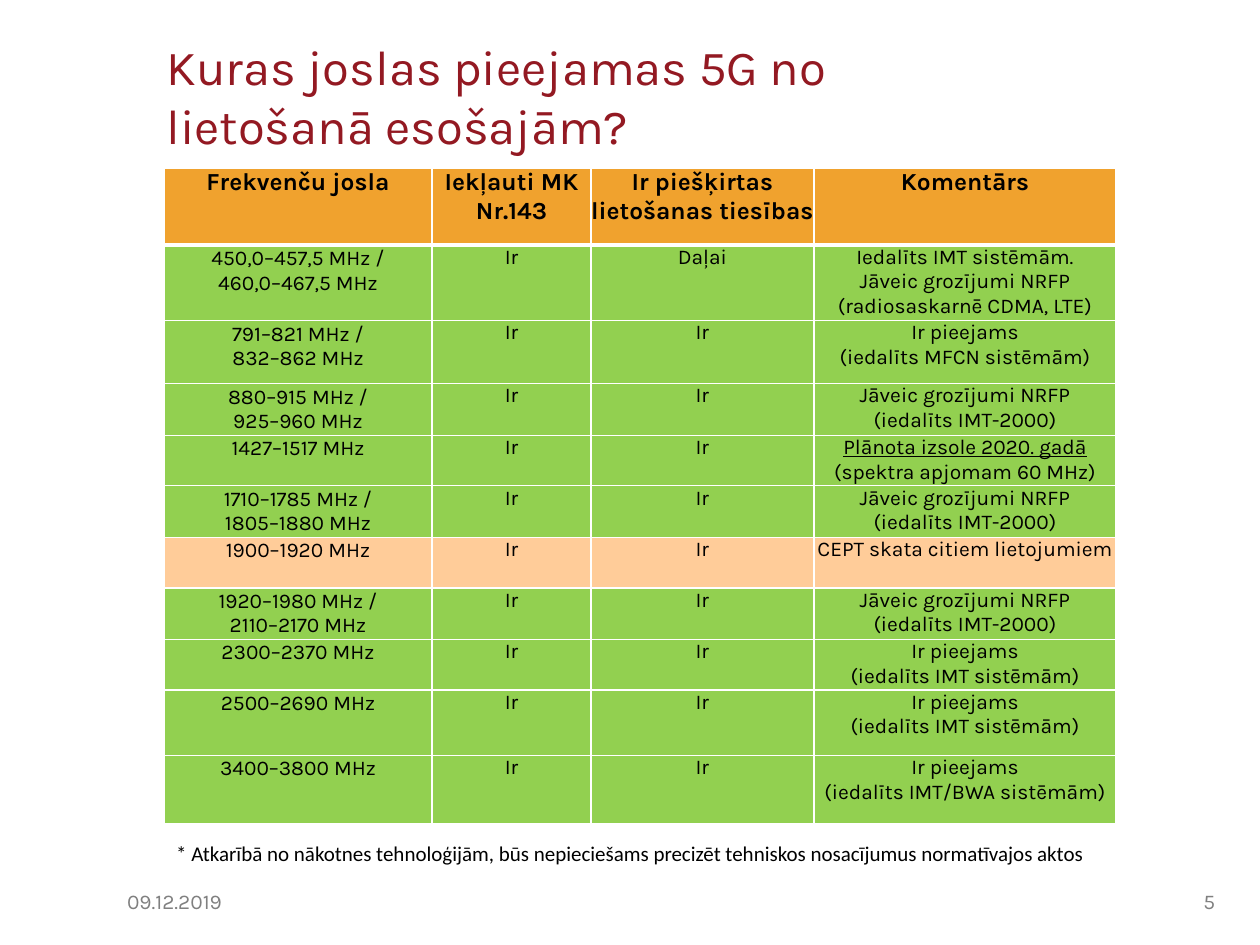
from dataclasses import dataclass

from lxml.etree import SubElement
from pptx import Presentation
from pptx.dml.color import RGBColor
from pptx.enum.text import MSO_ANCHOR as Anchor, PP_ALIGN as Align
from pptx.oxml.ns import qn
from pptx.util import Pt


@dataclass(frozen=True)
class Theme:
    font: str = "Karla"
    note_font: str = "Calibri"
    title: str = "931922"
    text: str = "000000"
    muted: str = "808080"
    border: str = "FFFFFF"
    header: str = "F0A22E"
    available: str = "92D050"
    other_use: str = "FFCC99"
    title_size: int = 28
    header_size: int = 14
    body_size: int = 12


THEME = Theme()

COLUMN_WIDTHS = (153.4, 90.7, 127.4, 172.8)
ROW_HEIGHTS = (44, 39, 36) + (28.8,) * 6 + (37.5, 39)

HEADER = ("Frekvenču josla", "Iekļauti MK Nr.143",
          "Ir piešķirtas\nlietošanas tiesības", "Komentārs")
AMENDING = "Jāveic grozījumi NRFP\n(iedalīts IMT-2000)"
IMT = "Ir pieejams\n(iedalīts IMT sistēmām)"
AUCTION = "Plānota izsole 2020. gadā"
OTHER_USE = "CEPT skata citiem lietojumiem"

# Band, usage rights granted, comment
BANDS = (
    ("450,0–457,5 MHz /\n460,0–467,5 MHz", "Daļai",
     "Iedalīts IMT sistēmām.\nJāveic grozījumi NRFP (radiosaskarnē CDMA, LTE)"),
    ("791–821 MHz /\n832–862 MHz", "Ir", "Ir pieejams\n(iedalīts MFCN sistēmām)"),
    ("880–915 MHz /\n925–960 MHz", "Ir", AMENDING),
    ("1427–1517 MHz", "Ir", AUCTION + " (spektra apjomam 60 MHz)"),
    ("1710–1785 MHz /\n1805–1880 MHz", "Ir", AMENDING),
    ("1900–1920 MHz", "Ir", OTHER_USE),
    ("1920–1980 MHz /\n2110–2170 MHz", "Ir", AMENDING),
    ("2300–2370 MHz", "Ir", IMT),
    ("2500–2690 MHz", "Ir", IMT),
    ("3400–3800 MHz", "Ir", "Ir pieejams\n(iedalīts IMT/BWA sistēmām)"),
)


def set_format(target, values):
    for name, value in values.items():
        setattr(target, name, value)


def add_run(paragraph, text, color, size, **font_values):
    run = paragraph.add_run()
    run.text = text
    set_format(run.font, {"name": THEME.font, "size": Pt(size), **font_values})
    run.font.color.rgb = RGBColor.from_string(color)


def add_text(slide, box, text, color, size, align=Align.LEFT,
             anchor=Anchor.MIDDLE, wrap=True, **font_values):
    shape = slide.shapes.add_textbox(*map(Pt, box))
    set_format(shape.text_frame, {"word_wrap": wrap, "vertical_anchor": anchor})
    paragraph = shape.text_frame.paragraphs[0]
    paragraph.alignment = align
    add_run(paragraph, text, color, size, **font_values)


def add_borders(cell, top, bottom):
    properties = cell._tc.get_or_add_tcPr()
    for side, width in {"L": 1, "R": 1, "T": top, "B": bottom}.items():
        line = SubElement(properties, qn(f"a:ln{side}"), w=str(Pt(width)))
        fill = SubElement(line, qn("a:solidFill"))
        SubElement(fill, qn("a:srgbClr"), val=THEME.border)


def fill_cell(cell, text, fill, size, bold, margin):
    set_format(cell, {"margin_left": margin, "margin_right": margin,
                      "margin_top": margin, "margin_bottom": 0})
    cell.fill.solid()
    cell.fill.fore_color.rgb = RGBColor.from_string(fill)
    for index, line in enumerate(text.split("\n")):
        frame = cell.text_frame
        paragraph = frame.add_paragraph() if index else frame.paragraphs[0]
        paragraph.alignment = Align.CENTER
        # The planned auction is underlined
        if line.startswith(AUCTION):
            add_run(paragraph, AUCTION, THEME.text, size, bold=bold, underline=True)
            line = line.removeprefix(AUCTION)
        add_run(paragraph, line, THEME.text, size, bold=bold)


def add_band_table(slide, box):
    rows = [HEADER] + [(band, "Ir", granted, comment)
                       for band, granted, comment in BANDS]
    table = slide.shapes.add_table(len(rows), len(HEADER), *map(Pt, box)).table
    for column, width in zip(table.columns, COLUMN_WIDTHS):
        column.width = Pt(width)
    for row, height in zip(table.rows, ROW_HEIGHTS):
        row.height = Pt(height)

    for row_index, texts in enumerate(rows):
        is_header = row_index == 0
        if is_header:
            fill, size = THEME.header, THEME.header_size
        else:
            fill = THEME.other_use if texts[-1] == OTHER_USE else THEME.available
            size = THEME.body_size
        for column_index, text in enumerate(texts):
            cell = table.cell(row_index, column_index)
            add_borders(cell, top=3 if row_index == 1 else 1,
                        bottom=3 if is_header else 1)
            margin = Pt(0.7) if column_index == 0 and not is_header else 0
            fill_cell(cell, text, fill, size, is_header, margin)


def add_footer(slide, box):
    left, top, width, height = box
    field_width = 168
    add_text(slide, (left, top, field_width, height), "09.12.2019",
             THEME.muted, THEME.body_size)
    add_text(slide, (left + width - field_width, top, field_width, height), "5",
             THEME.muted, THEME.body_size, align=Align.RIGHT)


def main():
    presentation = Presentation()
    set_format(presentation, {"slide_width": Pt(720), "slide_height": Pt(540)})
    slide = presentation.slides.add_slide(presentation.slide_layouts[6])

    # Title
    add_text(slide, (88, 9.5, 456.5, 90),
             "Kuras joslas pieejamas 5G no lietošanā esošajām?",
             THEME.title, THEME.title_size)
    # Footer
    add_footer(slide, (65.5, 500.5, 636, 28.8))
    # Frequency bands
    add_band_table(slide, (93.6, 96, sum(COLUMN_WIDTHS), sum(ROW_HEIGHTS)))
    # Footnote
    add_text(slide, (93.6, 476.6, 537, 21.8),
             "* Atkarībā no nākotnes tehnoloģijām, būs nepieciešams precizēt "
             "tehniskos nosacījumus normatīvajos aktos",
             THEME.text, THEME.body_size, anchor=Anchor.TOP, wrap=False,
             name=THEME.note_font)

    presentation.save("out.pptx")


if __name__ == "__main__":
    main()
